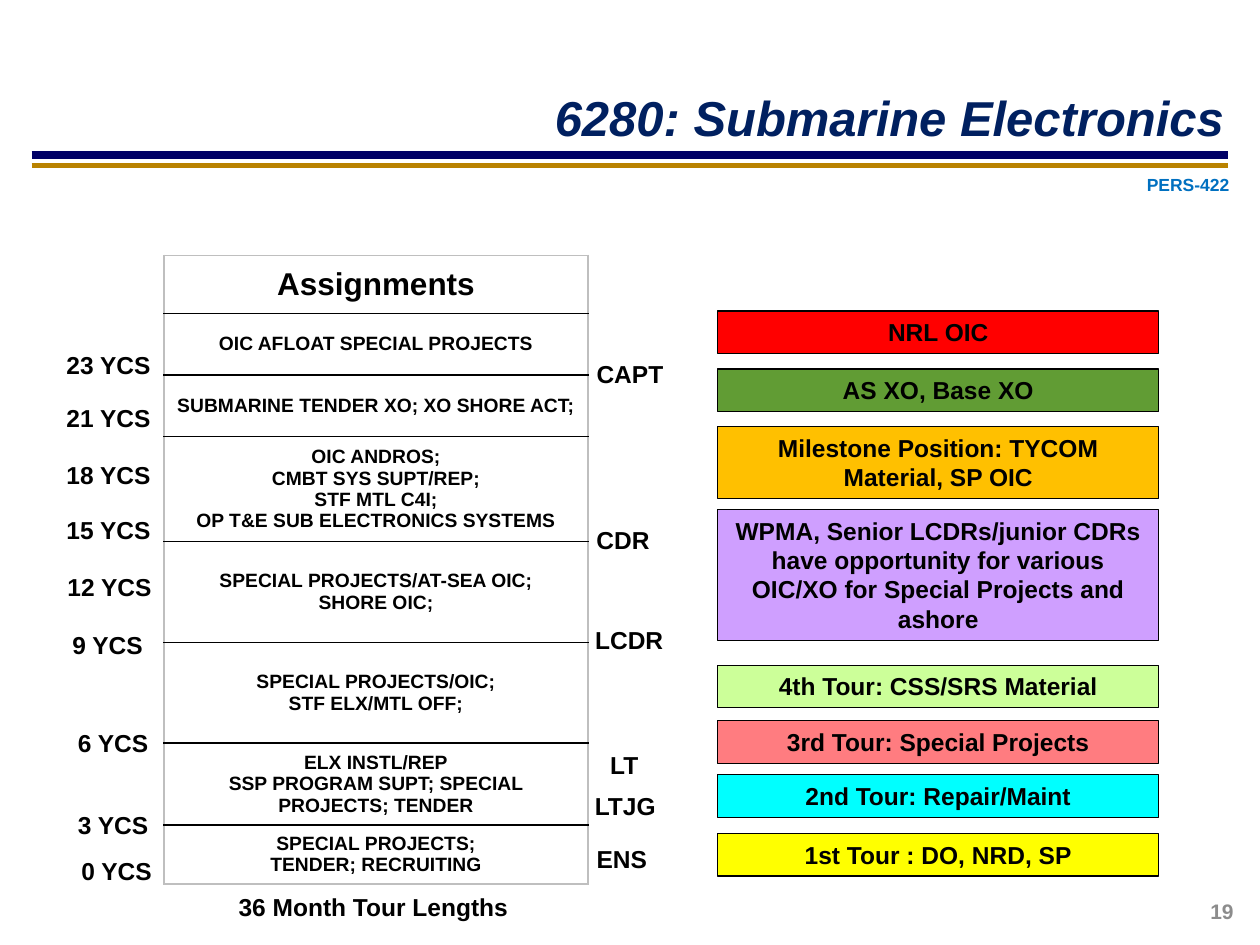
from lxml import etree
from pptx import Presentation
from pptx.dml.color import RGBColor
from pptx.enum.shapes import MSO_CONNECTOR, MSO_SHAPE
from pptx.enum.text import MSO_ANCHOR, MSO_AUTO_SIZE, PP_ALIGN
from pptx.oxml.ns import qn
from pptx.util import Cm, Pt

STRAIGHT = MSO_CONNECTOR.STRAIGHT
RECTANGLE = MSO_SHAPE.RECTANGLE
TOP, MIDDLE = MSO_ANCHOR.TOP, MSO_ANCHOR.MIDDLE
GROW = MSO_AUTO_SIZE.SHAPE_TO_FIT_TEXT
CENTER, RIGHT = PP_ALIGN.CENTER, PP_ALIGN.RIGHT

BLACK = RGBColor(0x00, 0x00, 0x00)
BORDER_GRAY = RGBColor(0xBF, 0xBF, 0xBF)
NUMBER_GRAY = RGBColor(0x8C, 0x8C, 0x8C)
TITLE_NAVY = RGBColor(0x00, 0x20, 0x60)
RULE_NAVY = RGBColor(0x00, 0x00, 0x66)
RULE_GOLD = RGBColor(0xB9, 0x82, 0x00)
OFFICE_BLUE = RGBColor(0x00, 0x70, 0xC0)
RED = RGBColor(0xFF, 0x00, 0x00)
GREEN = RGBColor(0x61, 0x9C, 0x34)
AMBER = RGBColor(0xFF, 0xC0, 0x00)
PURPLE = RGBColor(0xCF, 0x9F, 0xFF)
LIME = RGBColor(0xCC, 0xFF, 0x99)
PINK = RGBColor(0xFF, 0x7C, 0x80)
CYAN = RGBColor(0x00, 0xFF, 0xFF)
YELLOW = RGBColor(0xFF, 0xFF, 0x00)


def write(frame, lines, size, color=BLACK, align=CENTER, italic=False):
    """Fill a text frame with one bold Arial paragraph per line."""
    for index, line in enumerate(lines):
        para = frame.add_paragraph() if index else frame.paragraphs[0]
        para.alignment = align
        span = para.add_run()
        span.text = line
        span.font.name = "Arial"
        span.font.size = Pt(size)
        span.font.bold = True
        span.font.italic = italic
        span.font.color.rgb = color


def add_label(text, left, top, width, height, size=14, color=BLACK,
              align=CENTER, wrap=False, anchor=TOP, italic=False):
    box = page.shapes.add_textbox(Cm(left), Cm(top), Cm(width), Cm(height))
    frame = box.text_frame
    frame.word_wrap = wrap
    frame.vertical_anchor = anchor
    write(frame, [text], size, color, align, italic)
    if anchor == TOP:
        frame.auto_size = GROW


deck = Presentation()
deck.slide_width = Cm(25.4)
deck.slide_height = Cm(19.05)
page = deck.slides.add_slide(deck.slide_layouts[6])

# Header rules
for y, color, weight in [(3.12, RULE_NAVY, 4.5), (3.33, RULE_GOLD, 2.75)]:
    rule = page.shapes.add_connector(STRAIGHT, Cm(0.64), Cm(y), Cm(24.76), Cm(y))
    rule.line.color.rgb = color
    rule.line.width = Pt(weight)
    etree.SubElement(rule._element.spPr, qn("a:effectLst"))

# Header and footer text
add_label("6280: Submarine Electronics", 6.3, 1.6, 18.62, 1.5, size=28,
          color=TITLE_NAVY, align=RIGHT, wrap=True, anchor=MIDDLE, italic=True)
add_label("PERS-422", 22.86, 3.38, 2.18, 0.68, size=10, color=OFFICE_BLUE)
add_label("19", 17.07, 17.86, 8.05, 1.02, size=12, color=NUMBER_GRAY,
          align=RIGHT, wrap=True, anchor=MIDDLE)

# Assignments table: row height and lines
assignments = [
    (1.17, ["Assignments"]),
    (1.24, ["OIC AFLOAT SPECIAL PROJECTS"]),
    (1.24, ["SUBMARINE TENDER XO; XO SHORE ACT;"]),
    (2.11, ["OIC ANDROS;", "CMBT SYS SUPT/REP;", "STF MTL C4I;",
            "OP T&E SUB ELECTRONICS SYSTEMS"]),
    (2.03, ["SPECIAL PROJECTS/AT-SEA OIC;", "SHORE OIC;"]),
    (2.03, ["SPECIAL PROJECTS/OIC;", "STF ELX/MTL OFF;"]),
    (1.65, ["ELX INSTL/REP", "SSP PROGRAM SUPT; SPECIAL PROJECTS; TENDER"]),
    (1.19, ["SPECIAL PROJECTS;", "TENDER; RECRUITING"]),
]
last = len(assignments) - 1
table = page.shapes.add_table(len(assignments), 1, Cm(3.31), Cm(5.15), Cm(8.54),
                              Cm(sum(height for height, _ in assignments))).table
table.first_row = False
table.horz_banding = False
for index, (height, lines) in enumerate(assignments):
    table.rows[index].height = Cm(height)
    cell = table.cell(index, 0)
    cell.vertical_anchor = MIDDLE
    write(cell.text_frame, lines, 11 if index else 18)
    borders = [
        ("a:lnL", BORDER_GRAY),
        ("a:lnR", BORDER_GRAY),
        ("a:lnT", BLACK if index else BORDER_GRAY),
        ("a:lnB", BLACK if index < last else BORDER_GRAY),
    ]
    properties = cell._tc.get_or_add_tcPr()
    for tag, color in borders:
        border = etree.SubElement(properties, qn(tag), w=str(Pt(1)))
        solid = etree.SubElement(border, qn("a:solidFill"))
        etree.SubElement(solid, qn("a:srgbClr"), val=str(color))
    cell.fill.background()

add_label("36 Month Tour Lengths", 4.09, 17.86, 6.88, 0.86, wrap=True)

# Years of commissioned service: years, left, top
service_years = [
    (23, 1.07, 6.93), (21, 1.07, 8.0), (18, 1.07, 9.14), (15, 1.07, 10.26),
    (12, 1.09, 11.4), (9, 1.19, 12.57), (6, 1.3, 14.55), (3, 1.3, 16.2),
    (0, 1.37, 17.13),
]
for years, left, top in service_years:
    add_label(f"{years} YCS", left, top, 2.24 if years > 9 else 1.96, 0.88)

# Ranks: left, top, width
ranks = [
    ("CAPT", 11.76, 7.11, 1.88), ("CDR", 11.76, 10.46, 1.6),
    ("LCDR", 11.73, 12.47, 1.91), ("LT", 12.04, 14.99, 1.09),
    ("LTJG", 11.73, 15.82, 1.75), ("ENS", 11.76, 16.89, 1.55),
]
for rank, left, top, width in ranks:
    add_label(rank, left, top, width, 0.91)

# Tour bars: top, height, fill
tours = [
    ("NRL OIC", 6.27, 0.86, RED),
    ("AS XO, Base XO", 7.44, 0.86, GREEN),
    ("Milestone Position: TYCOM Material, SP OIC", 8.6, 1.45, AMBER),
    ("WPMA, Senior LCDRs/junior CDRs have opportunity for various OIC/XO "
     "for Special Projects and ashore", 10.27, 2.64, PURPLE),
    ("4th Tour: CSS/SRS Material", 13.41, 0.86, LIME),
    ("3rd Tour: Special Projects", 14.53, 0.86, PINK),
    ("2nd Tour: Repair/Maint", 15.62, 0.86, CYAN),
    ("1st Tour : DO, NRD, SP", 16.8, 0.86, YELLOW),
]
for text, top, height, color in tours:
    bar = page.shapes.add_shape(RECTANGLE, Cm(14.47), Cm(top), Cm(8.89), Cm(height))
    bar.shadow.inherit = False
    bar.fill.solid()
    bar.fill.fore_color.rgb = color
    bar.line.color.rgb = BLACK
    bar.line.width = Pt(0.75)
    bar.text_frame.word_wrap = True
    bar.text_frame.vertical_anchor = TOP
    bar.text_frame.auto_size = GROW
    write(bar.text_frame, [text], 14)

deck.save("out.pptx")
